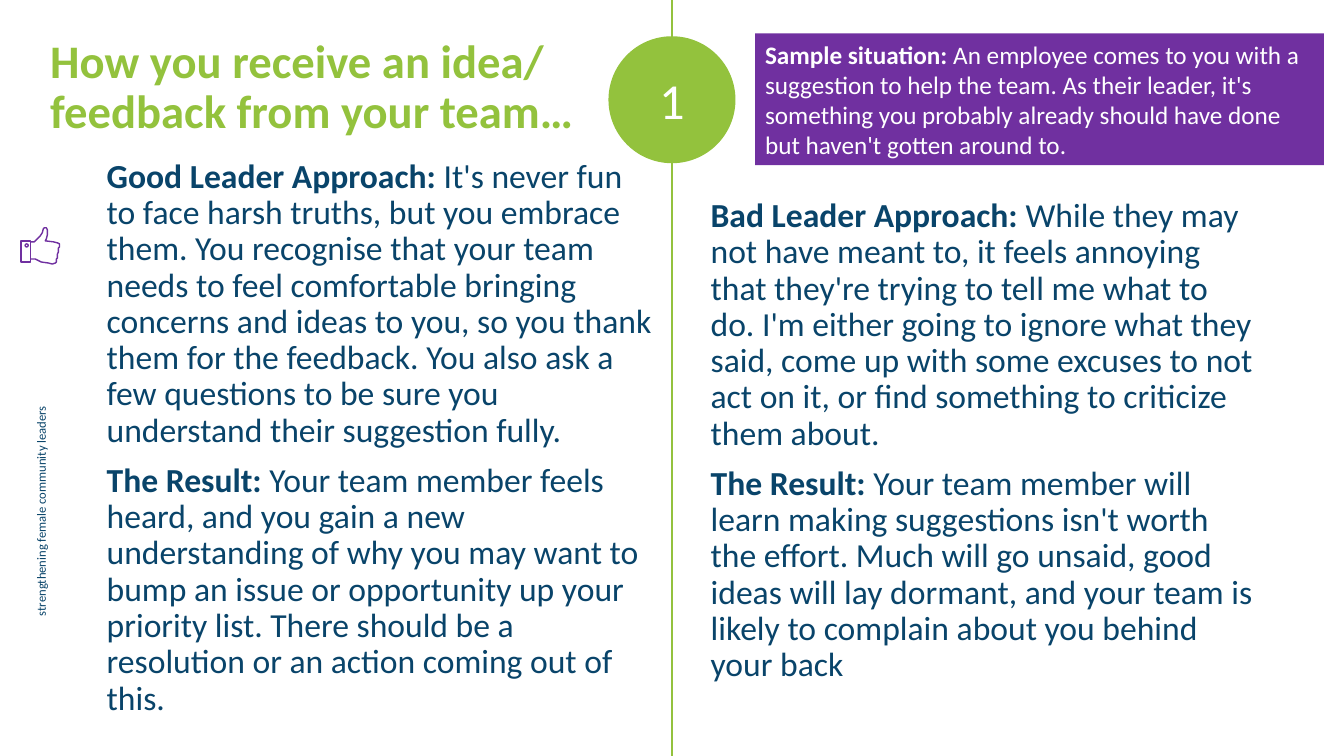
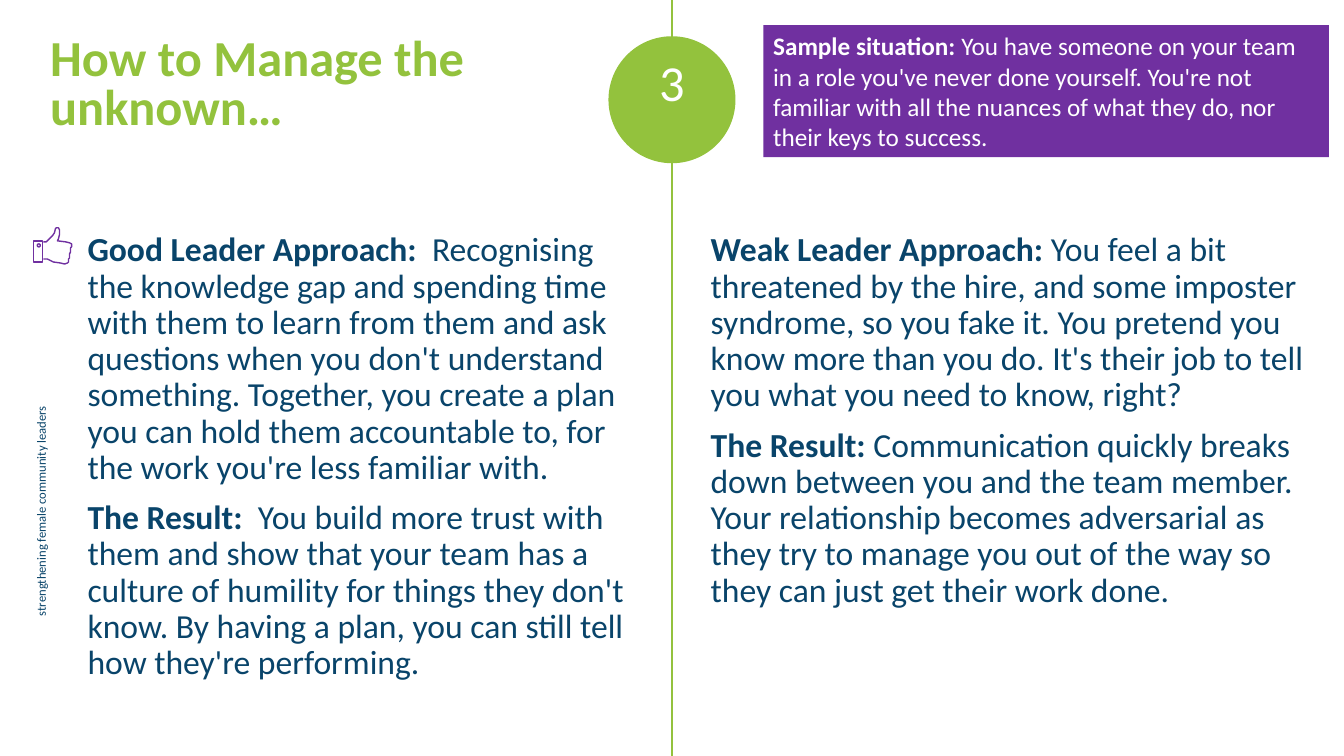
import pptx
import pptx.util
import pptx.dml.color
import pptx.enum.shapes
import pptx.enum.text
import pptx.oxml.ns
from lxml import etree

Inches = pptx.util.Inches
Pt = pptx.util.Pt
RGB = pptx.dml.color.RGBColor
ALIGN = pptx.enum.text.PP_ALIGN
ANCHOR = pptx.enum.text.MSO_ANCHOR
SHAPE = pptx.enum.shapes.MSO_SHAPE

THEME = {
    "font": "Calibri",
    "green": RGB.from_string("93C23D"),
    "navy": RGB.from_string("09446A"),
    "purple": RGB.from_string("7030A0"),
    "white": RGB.from_string("FFFFFF"),
    "body": 24, "situation": 18, "number": 36, "tagline": 9,
    "line": 1, "spacing": 0.9, "before": 10,
}

WIDTH, HEIGHT = 13.33, 7.5
MIDDLE = WIDTH / 2
CIRCLE = 1.26
TAGLINE = "strengthening female community leaders"

LESSONS = [
    {
        "title": "How you receive an idea/ feedback from your team…",
        "title_size": 33.3, "title_spacing": 0.9,
        "number": "1", "number_top": 0.7,
        "situation": ("Sample situation:", " An employee comes to you with a suggestion to help the team. As their leader, it's something you probably already should have done but haven't gotten around to."),
        "situation_at": (7.49, 0.33, 5.64, 1.31),
        "good_at": (0.96, 1.53, 5.61, 5.09),
        "good": [
            ("Good Leader Approach: ", "It's never fun to face harsh truths, but you embrace them. You recognise that your team needs to feel comfortable bringing concerns and ideas to you, so you thank them for the feedback. You also ask a few questions to be sure you understand their suggestion fully."),
            ("The Result: ", "Your team member feels heard, and you gain a new understanding of why you may want to bump an issue or opportunity up your priority list. There should be a resolution or an action coming out of this."),
        ],
        "poor_at": (6.95, 1.92, 5.61, 4.07),
        "poor": [
            ("Bad Leader Approach: ", "While they may not have meant to, it feels annoying that they're trying to tell me what to do. I'm either going to ignore what they said, come up with some excuses to not act on it, or find something to criticize them about."),
            ("The Result: ", "Your team member will learn making suggestions isn't worth the effort. Much will go unsaid, good ideas will lay dormant, and your team is likely to complain about you behind your back"),
        ],
        "thumb_left": 0.21,
    },
    {
        "title": "How to Manage the unknown…",
        "title_size": 36, "title_spacing": 0.8,
        "number": "3", "number_top": 0.53,
        "situation": ("Sample situation: ", "You have someone on your team in a role you've never done yourself. You're not familiar with all the nuances of what they do, nor their keys to success."),
        "situation_at": (7.57, 0.25, 5.61, 1.31),
        "good_at": (0.77, 2.26, 5.74, 4.07),
        "good": [
            ("Good Leader Approach:  ", "Recognising the knowledge gap and spending time with them to learn from them and ask questions when you don't understand something. Together, you create a plan you can hold them accountable to, for the work you're less familiar with."),
            ("The Result:  ", "You build more trust with them and show that your team has a culture of humility for things they don't know. By having a plan, you can still tell how they're performing."),
        ],
        "poor_at": (6.95, 2.26, 6.13, 4.07),
        "poor": [
            ("Weak Leader Approach: ", "You feel a bit threatened by the hire, and some imposter syndrome, so you fake it. You pretend you know more than you do. It's their job to tell you what you need to know, right?"),
            ("The Result: ", "Communication quickly breaks down between you and the team member. Your relationship becomes adversarial as they try to manage you out of the way so they can just get their work done."),
        ],
        "thumb_left": 0.33,
    },
]

THUMB_TOP = 2.26
CUFF = [(0, 0.13), (0, 0.34), (0.09, 0.34), (0.09, 0.13)]
BUTTON = (0.04, 0.16, 0.03, 0.03)
HAND = [
    (0.1, 0.31), (0.14, 0.31), (0.2, 0.34), (0.27, 0.35), (0.31, 0.36),
    (0.34, 0.35), (0.35, 0.34), (0.35, 0.31), (0.36, 0.3), (0.36, 0.26),
    (0.37, 0.24), (0.37, 0.2), (0.38, 0.19), (0.38, 0.16), (0.36, 0.15),
    (0.32, 0.14), (0.24, 0.13), (0.25, 0.11), (0.26, 0.07), (0.26, 0.02),
    (0.25, 0), (0.23, 0), (0.22, 0.01), (0.21, 0.05), (0.19, 0.08),
    (0.17, 0.1), (0.13, 0.14), (0.1, 0.14),
]


def inches(*lengths):
    return [Inches(length) for length in lengths]


def add_run(paragraph, words, size, color, bold=False):
    run = paragraph.add_run()
    run.text = words
    run.font.name = THEME["font"]
    run.font.size = Pt(size)
    run.font.bold = bold
    run.font.color.rgb = color


def write(frame, paragraphs, size, color, spacing=None, align=ALIGN.LEFT):
    frame.word_wrap = True
    for index, runs in enumerate(paragraphs):
        paragraph = frame.add_paragraph() if index else frame.paragraphs[0]
        paragraph.alignment = align
        if spacing:
            paragraph.line_spacing = spacing
            paragraph.space_before = Pt(THEME["before"])
        for words, bold in runs:
            add_run(paragraph, words, size, color, bold)


def add_text(slide, at, paragraphs, size, color, spacing=THEME["spacing"], align=ALIGN.LEFT):
    box = slide.shapes.add_textbox(*inches(*at))
    write(box.text_frame, paragraphs, size, color, spacing, align)
    return box


def labelled(pairs):
    return [[(label, True), (words, False)] for label, words in pairs]


def add_filled(slide, kind, at, color):
    shape = slide.shapes.add_shape(kind, *inches(*at))
    shape.shadow.inherit = False
    shape.fill.solid()
    shape.fill.fore_color.rgb = color
    shape.line.fill.background()
    return shape


def outline(shape):
    shape.shadow.inherit = False
    shape.fill.background()
    shape.line.color.rgb = THEME["purple"]
    shape.line.width = Pt(THEME["line"])


def add_frame(slide):
    divider = slide.shapes.add_connector(
        pptx.enum.shapes.MSO_CONNECTOR.STRAIGHT, *inches(MIDDLE, 0, MIDDLE, HEIGHT))
    divider.line.color.rgb = THEME["green"]
    divider.line.width = Pt(THEME["line"])
    etree.SubElement(divider.element.spPr, pptx.oxml.ns.qn("a:effectLst"))
    add_filled(slide, SHAPE.OVAL, (MIDDLE - CIRCLE / 2, 0.36, CIRCLE, CIRCLE), THEME["green"])
    tagline = add_text(slide, (-0.76, 4.92, 2.33, 0.25), [[(TAGLINE, False)]],
                       THEME["tagline"], THEME["navy"], None)
    tagline.text_frame.word_wrap = False
    tagline.rotation = 270


def add_thumb(slide, left):
    for points, closed in ((CUFF, True), (HAND, False)):
        start, *others = [inches(left + x, THUMB_TOP + y) for x, y in points]
        builder = slide.shapes.build_freeform(*start)
        builder.add_line_segments(others, close=closed)
        outline(builder.convert_to_shape())
    x, y, width, height = BUTTON
    outline(slide.shapes.add_shape(SHAPE.OVAL, *inches(left + x, THUMB_TOP + y, width, height)))


def add_lesson(deck, lesson):
    slide = deck.slides.add_slide(deck.slide_layouts[6])
    add_frame(slide)
    add_text(slide, (0.4, 0.33, 5.64, 1.14), [[(lesson["title"], True)]],
             lesson["title_size"], THEME["green"], lesson["title_spacing"])
    add_text(slide, (MIDDLE - CIRCLE / 2, lesson["number_top"], CIRCLE, 0.94),
             [[(lesson["number"], False)]], THEME["number"], THEME["white"], align=ALIGN.CENTER)
    for side in ("good", "poor"):
        add_text(slide, lesson[side + "_at"], labelled(lesson[side]), THEME["body"], THEME["navy"])
    situation = add_filled(slide, SHAPE.RECTANGLE, lesson["situation_at"], THEME["purple"])
    situation.text_frame.vertical_anchor = ANCHOR.MIDDLE
    write(situation.text_frame, labelled([lesson["situation"]]), THEME["situation"], THEME["white"])
    add_thumb(slide, lesson["thumb_left"])


def main():
    deck = pptx.Presentation()
    deck.slide_width, deck.slide_height = inches(WIDTH, HEIGHT)
    for lesson in LESSONS:
        add_lesson(deck, lesson)
    deck.save("out.pptx")


if __name__ == "__main__":
    main()
